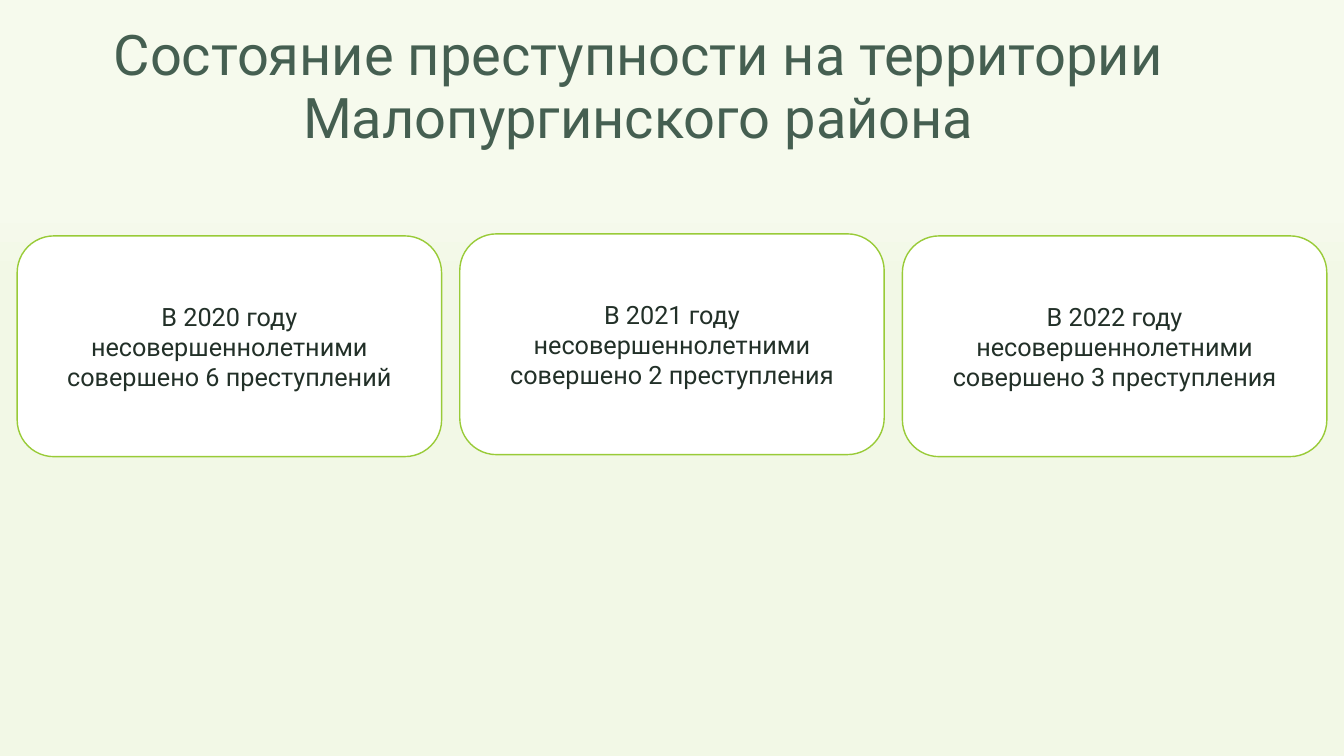
from pptx import Presentation
from pptx.dml.color import RGBColor
from pptx.enum.shapes import MSO_SHAPE
from pptx.enum.text import MSO_ANCHOR, PP_ALIGN
from pptx.util import Inches, Pt

# Content
TITLE = "Состояние преступности на территории Малопургинского района"
# Card text and its top edge in inches
CARDS = [
    ("В 2020 году несовершеннолетними совершено 6 преступлений", 2.34),
    ("В 2021 году несовершеннолетними совершено 2 преступления", 2.32),
    ("В 2022 году несовершеннолетними совершено 3 преступления", 2.34),
]

# Style
FONT = "Roboto"
TITLE_GREEN = RGBColor(0x45, 0x5F, 0x51)
TEXT_GREEN = RGBColor(0x22, 0x30, 0x28)
LIME = RGBColor(0x99, 0xCB, 0x38)
WHITE = RGBColor(0xFF, 0xFF, 0xFF)
BACKGROUND_STOPS = [(0.27, RGBColor(0xF6, 0xFA, 0xED)),
                    (0.37, RGBColor(0xF2, 0xF8, 0xE6))]

# Layout in inches: equal cards between equal side margins
SLIDE_WIDTH, SLIDE_HEIGHT = 13.33, 7.5
MARGIN = 0.17
CARD_WIDTH, CARD_HEIGHT = 4.21, 2.19
CARD_STEP = (SLIDE_WIDTH - 2 * MARGIN - CARD_WIDTH) / (len(CARDS) - 1)


def write(shape, text, size, color):
    shape.text_frame.word_wrap = True
    paragraph = shape.text_frame.paragraphs[0]
    paragraph.text = text
    paragraph.alignment = PP_ALIGN.CENTER
    paragraph.font.name = FONT
    paragraph.font.size = Pt(size)
    paragraph.font.color.rgb = color
    return paragraph


presentation = Presentation()
presentation.slide_width = Inches(SLIDE_WIDTH)
presentation.slide_height = Inches(SLIDE_HEIGHT)
slide = presentation.slides.add_slide(presentation.slide_layouts[6])

# Background, top to bottom
background = slide.background.fill
background.gradient()
background.gradient_angle = 270
for stop, (position, color) in zip(background.gradient_stops, BACKGROUND_STOPS):
    stop.position = position
    stop.color.rgb = color

# Title
title = slide.shapes.add_textbox(Inches(MARGIN), Inches(0.2), Inches(12.32), Inches(3.92))
paragraph = write(title, TITLE, 40, TITLE_GREEN)
paragraph.line_spacing = 0.94

# Cards, one per year
for column, (text, top) in enumerate(CARDS):
    card = slide.shapes.add_shape(
        MSO_SHAPE.FLOWCHART_ALTERNATE_PROCESS,
        Inches(MARGIN + column * CARD_STEP), Inches(top),
        Inches(CARD_WIDTH), Inches(CARD_HEIGHT))
    card.shadow.inherit = False
    card.fill.solid()
    card.fill.fore_color.rgb = WHITE
    card.line.color.rgb = LIME
    card.line.width = Pt(1)
    card.text_frame.vertical_anchor = MSO_ANCHOR.MIDDLE
    write(card, text, 18, TEXT_GREEN)

presentation.save("out.pptx")
